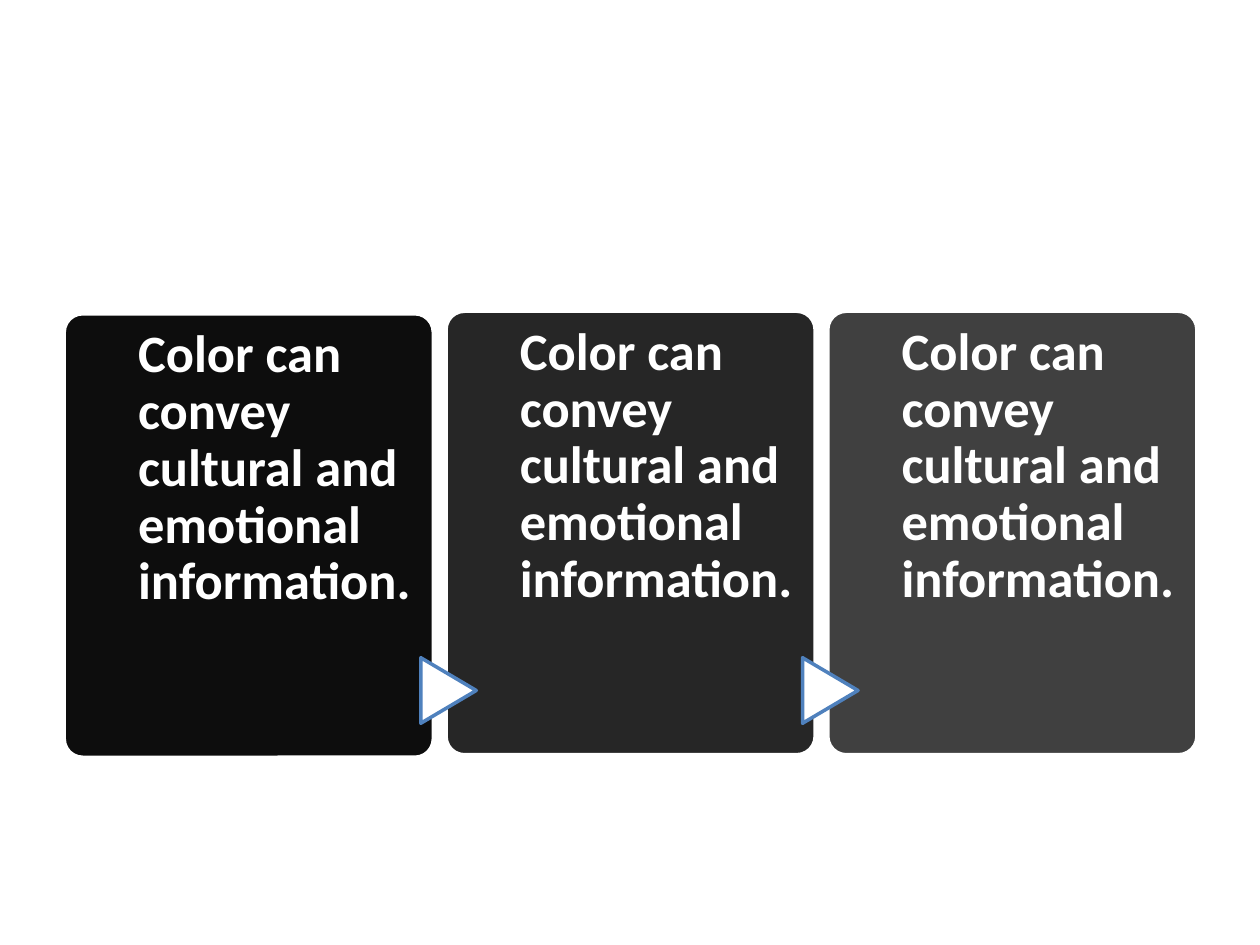
from dataclasses import dataclass

from pptx import Presentation
from pptx.dml.color import RGBColor
from pptx.enum.shapes import MSO_SHAPE
from pptx.enum.text import MSO_ANCHOR, PP_ALIGN
from pptx.util import Inches, Pt


@dataclass(frozen=True)
class Theme:
    font: str = "Calibri"
    text_size: float = 30
    line_width: float = 2
    white: str = "FFFFFF"
    arrow_line: str = "4F81BD"
    cards: tuple = ("0D0D0D", "262626", "404040")


@dataclass(frozen=True)
class Box:
    left: float
    top: float
    width: float
    height: float

    def inches(self):
        return [Inches(value) for value in (self.left, self.top, self.width, self.height)]


THEME = Theme()
SLIDE_WIDTH, SLIDE_HEIGHT = 10, 7.5
MESSAGE = "Color can convey cultural and emotional information."

# Card row: equal columns, the first card sits slightly lower
ROW = Box(0.51, 2.47, 8.99, 3.52)
CARD_WIDTH = 2.93
COLUMN_STEP = (ROW.width - CARD_WIDTH) / (len(THEME.cards) - 1)
FIRST_CARD_DROP = 0.02


def add_filled_shape(slide, kind, box, fill, line):
    shape = slide.shapes.add_shape(kind, *box.inches())
    shape.shadow.inherit = False
    shape.fill.solid()
    shape.fill.fore_color.rgb = RGBColor.from_string(fill)
    shape.line.color.rgb = RGBColor.from_string(line)
    shape.line.width = Pt(THEME.line_width)
    return shape


def add_card(slide, box, fill):
    card = add_filled_shape(slide, MSO_SHAPE.ROUNDED_RECTANGLE, box, fill, THEME.white)
    card.adjustments[0] = 0.05


def add_arrow(slide, box):
    """Place a triangle pointing right across the card's left edge."""
    width, height = 0.52, 0.44
    arrow_box = Box(box.left - 0.24, box.top + 2.79, width, height)
    arrow = add_filled_shape(slide, MSO_SHAPE.FLOWCHART_EXTRACT, arrow_box,
                             THEME.white, THEME.arrow_line)
    arrow.rotation = 90


def add_message(slide, box, text):
    """Write the text in the card's right-hand part."""
    indent = box.width * 0.2
    text_box = Box(box.left + indent, box.top, box.width * 0.745, box.height)
    text_frame = slide.shapes.add_textbox(*text_box.inches()).text_frame
    text_frame.word_wrap = True
    text_frame.vertical_anchor = MSO_ANCHOR.TOP
    text_frame.margin_left = text_frame.margin_right = text_frame.margin_bottom = 0
    text_frame.margin_top = Inches(0.11)
    text_frame.text = text
    paragraph = text_frame.paragraphs[0]
    paragraph.alignment = PP_ALIGN.LEFT
    paragraph.line_spacing = 0.9
    font = paragraph.runs[0].font
    font.name = THEME.font
    font.size = Pt(THEME.text_size)
    font.bold = True
    font.color.rgb = RGBColor.from_string(THEME.white)


def add_card_row(slide, row):
    for column, fill in enumerate(THEME.cards):
        drop = FIRST_CARD_DROP if column == 0 else 0
        box = Box(row.left + column * COLUMN_STEP, row.top + drop, CARD_WIDTH, row.height)
        add_card(slide, box, fill)
        if column > 0:
            add_arrow(slide, box)
        add_message(slide, box, MESSAGE)


def main():
    presentation = Presentation()
    presentation.slide_width = Inches(SLIDE_WIDTH)
    presentation.slide_height = Inches(SLIDE_HEIGHT)
    slide = presentation.slides.add_slide(presentation.slide_layouts[6])
    add_card_row(slide, ROW)
    presentation.save("out.pptx")


if __name__ == "__main__":
    main()
